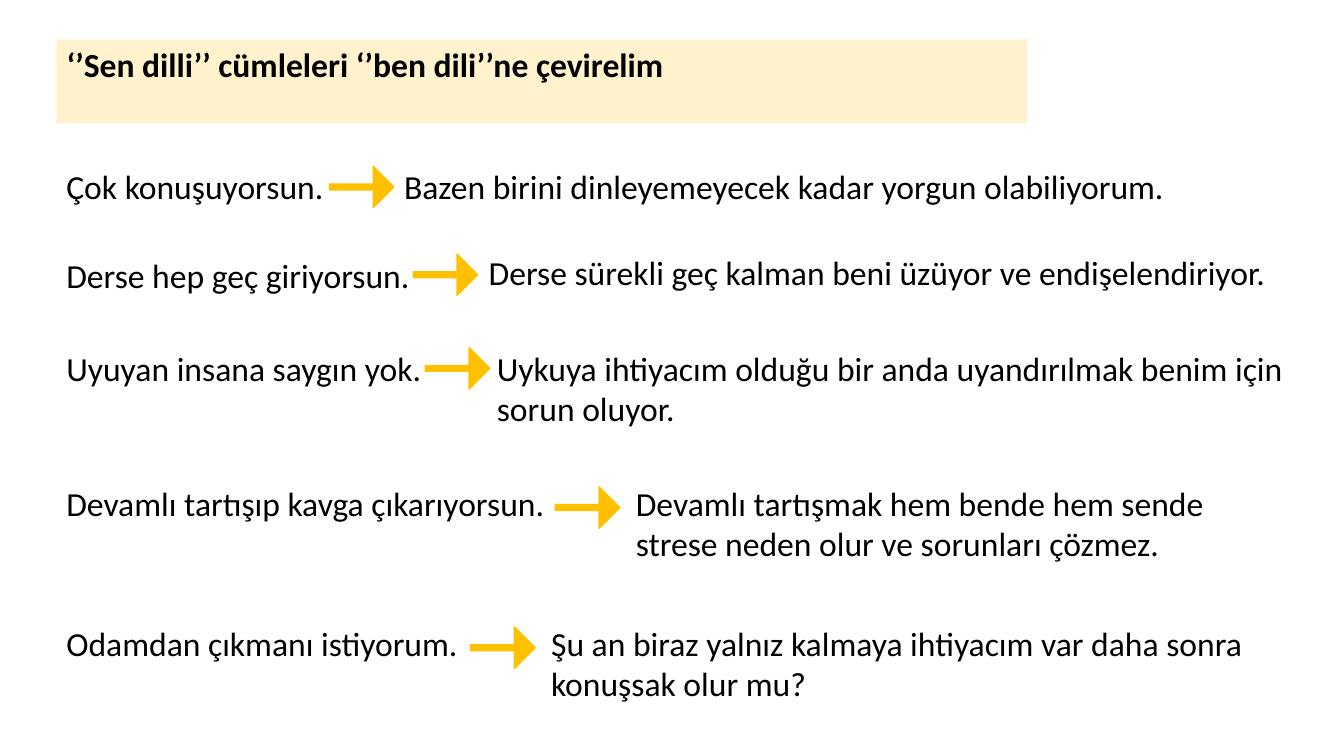
from pptx import Presentation
from pptx.dml.color import RGBColor
from pptx.enum.shapes import MSO_SHAPE as Preset
from pptx.enum.text import MSO_ANCHOR as Anchor, MSO_AUTO_SIZE as AutoSize, PP_ALIGN as Align
from pptx.util import Pt

COLORS = {"text": "000000", "band": "FFF2CC", "arrow": "FFC000"}
FONT = {"name": "Calibri", "size": Pt(24), "bold": False}
FRAME = {
    "auto_size": AutoSize.SHAPE_TO_FIT_TEXT,
    "vertical_anchor": Anchor.TOP,
    "margin_left": Pt(7.2),
    "margin_right": Pt(7.2),
    "margin_top": Pt(3.6),
    "margin_bottom": Pt(3.6),
}
LEFT = 40.3
LINE_HEIGHT = 29
ARROW_WIDTH, ARROW_HEIGHT = 46, 29.5

ROWS = [
    {"top": 115.2, "prompt": ("Çok konuşuyorsun.", 199.4),
     "arrow": (235.4, 3.6),
     "reply": ("Bazen birini dinleyemeyecek kadar yorgun olabiliyorum.", 281.5, 0, 562.3)},
    {"top": 178.6, "prompt": ("Derse hep geç giriyorsun.", 262.1),
     "arrow": (295.2, 2.9),
     "reply": ("Derse sürekli geç kalman beni üzüyor ve endişelendiriyor.", 342, -2.2, 571)},
    {"top": 244.8, "prompt": ("Uyuyan insana saygın yok.", 270),
     "arrow": (303.8, 3.6),
     "reply": ("Uykuya ihtiyacım olduğu bir anda uyandırılmak benim için\vsorun oluyor.",
               347.8, 0, 581)},
    {"top": 341.3, "prompt": ("Devamlı tartışıp kavga çıkarıyorsun.", 365),
     "arrow": (396.7, 6.5),
     "reply": ("Devamlı tartışmak hem bende hem sende\vstrese neden olur ve sorunları çözmez.",
               447.1, 0, 434.9)},
    {"top": 441.4, "prompt": ("Odamdan çıkmanı istiyorum.", 308.2),
     "arrow": (336.2, 6.5),
     "reply": ("Şu an biraz yalnız kalmaya ihtiyacım var daha sonra\vkonuşsak olur mu?",
               386.6, 0, 518.4)},
]


def color(name):
    return RGBColor.from_string(COLORS[name])


def apply(target, values):
    for name, value in values.items():
        setattr(target, name, value)


def write(shape, text, wrap=False, **font):
    frame = shape.text_frame
    apply(frame, {**FRAME, "word_wrap": wrap})
    para = frame.paragraphs[0]
    para.text = text
    para.alignment = Align.LEFT
    for span in para.runs:
        apply(span.font, {**FONT, **font})
        span.font.color.rgb = color("text")


def add_heading(page, left, top, width, height):
    title = page.shapes.title
    apply(title, {"left": Pt(left), "top": Pt(top), "width": Pt(width), "height": Pt(height)})
    title.fill.solid()
    title.fill.fore_color.rgb = color("band")
    write(title, "‘’Sen dilli’’ cümleleri ‘’ben dili’’ne çevirelim", wrap=True, bold=True)


def add_sentence(page, text, left, top, width):
    height = 7.2 + LINE_HEIGHT * (text.count("\v") + 1)
    box = page.shapes.add_textbox(Pt(left), Pt(top), Pt(width), Pt(height))
    write(box, text)


def add_arrow(page, left, top):
    arrow = page.shapes.add_shape(
        Preset.RIGHT_ARROW, Pt(left), Pt(top), Pt(ARROW_WIDTH), Pt(ARROW_HEIGHT))
    arrow.adjustments[0] = 0.14
    arrow.adjustments[1] = 0.5
    arrow.shadow.inherit = False
    arrow.fill.solid()
    arrow.fill.fore_color.rgb = color("arrow")
    arrow.line.color.rgb = color("arrow")
    arrow.line.width = Pt(1)


def add_row(page, left, top, prompt, arrow, reply):
    text, width = prompt
    add_sentence(page, text, left, top, width)
    arrow_left, arrow_drop = arrow
    add_arrow(page, arrow_left, top + arrow_drop)
    text, reply_left, reply_drop, width = reply
    add_sentence(page, text, reply_left, top + reply_drop, width)


def main():
    deck = Presentation()
    apply(deck, {"slide_width": Pt(960), "slide_height": Pt(540)})
    page = deck.slides.add_slide(deck.slide_layouts[5])
    add_heading(page, LEFT, 28.1, 693.4, 36.2)
    for row in ROWS:
        add_row(page, LEFT, **row)
    deck.save("out.pptx")


if __name__ == "__main__":
    main()
